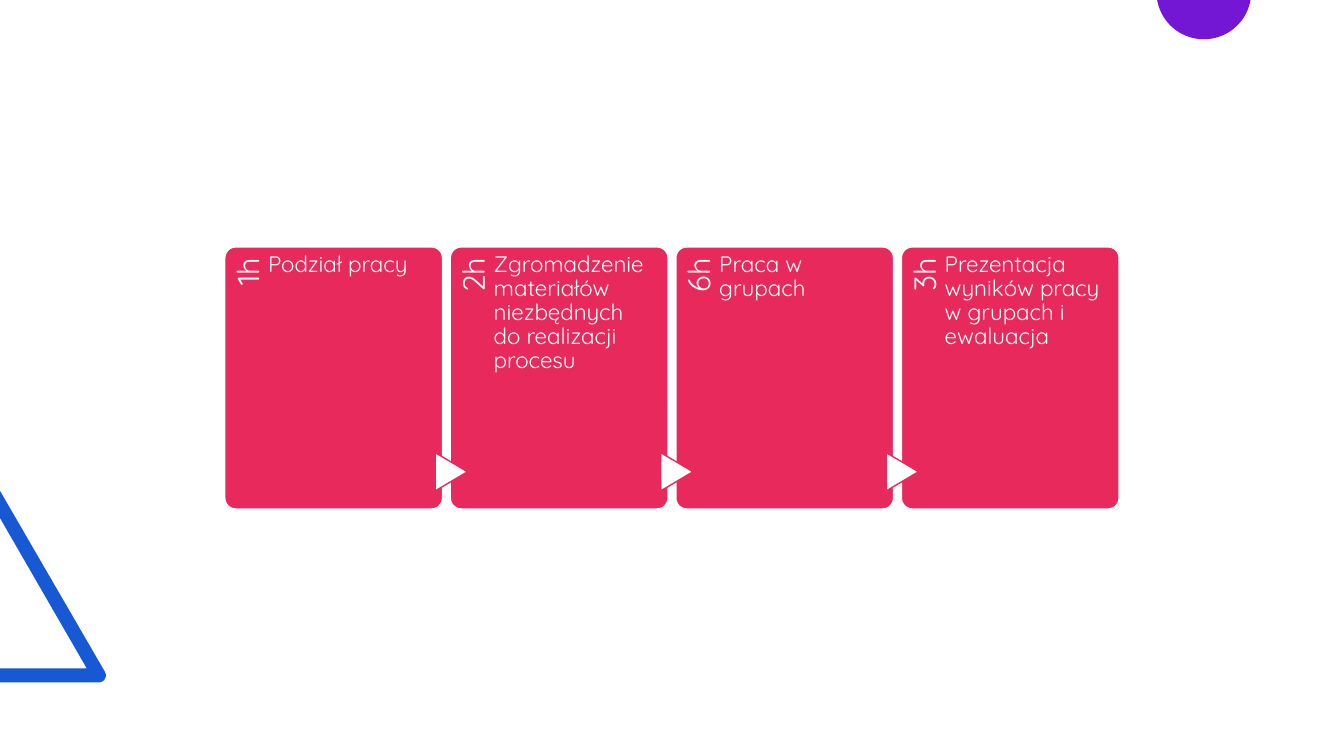
from dataclasses import dataclass
from math import cos, radians, sin

from pptx import Presentation
from pptx.dml.color import RGBColor
from pptx.enum.shapes import MSO_SHAPE
from pptx.enum.text import PP_ALIGN
from pptx.shapes.autoshape import Shape
from pptx.shapes.group import GroupShape
from pptx.slide import Slide
from pptx.util import Inches, Pt

COLORS = {"card": "E7295B", "triangle": "1759D5", "circle": "7417D5", "white": "FFFFFF"}
FONT = "Quicksand"

# Card row geometry, in inches
FIRST_LEFT, LAST_LEFT, CARD_TOP = 2.23, 8.94, 2.45
CARD_WIDTH, CARD_HEIGHT = 2.16, 2.6

Point = tuple[float, float]


@dataclass(frozen=True)
class Stage:
    hours: str
    task: str


STAGES = [
    Stage("1h", "Podział pracy"),
    Stage("2h", "Zgromadzenie materiałów niezbędnych do realizacji procesu"),
    Stage("6h", "Praca w grupach"),
    Stage("3h", "Prezentacja wyników pracy w grupach i ewaluacja"),
]


def color(name: str) -> RGBColor:
    return RGBColor.from_string(COLORS[name])


def arc(center: Point, radius: float, start: int, end: int, step: int) -> list[Point]:
    return [
        (center[0] + radius * cos(radians(angle)), center[1] + radius * sin(radians(angle)))
        for angle in range(start, end + 1, step)
    ]


def draw_outline(slide: Slide, points: list[Point], fill: str) -> None:
    corners = [(Inches(x), Inches(y)) for x, y in points]
    builder = slide.shapes.build_freeform(*corners[0])
    builder.add_line_segments(corners[1:], close=True)
    outline = builder.convert_to_shape()
    outline.shadow.inherit = False
    outline.fill.solid()
    outline.fill.fore_color.rgb = color(fill)
    outline.line.fill.background()


def draw_shape(group: GroupShape, kind: MSO_SHAPE, left: float, top: float,
               width: float, height: float, fill: str, line: str) -> Shape:
    shape = group.shapes.add_shape(
        kind, Inches(left), Inches(top), Inches(width), Inches(height))
    shape.shadow.inherit = False
    shape.fill.solid()
    shape.fill.fore_color.rgb = color(fill)
    shape.line.color.rgb = color(line)
    shape.line.width = Pt(1)
    return shape


def draw_text(group: GroupShape, text: str, left: float, top: float, width: float,
              height: float, size: int, inset_top: float, inset_right: float,
              align: PP_ALIGN) -> Shape:
    box = group.shapes.add_textbox(
        Inches(left), Inches(top), Inches(width), Inches(height))
    frame = box.text_frame
    frame.word_wrap = True
    frame.margin_left = frame.margin_bottom = 0
    frame.margin_top, frame.margin_right = Inches(inset_top), Inches(inset_right)
    frame.text = text
    paragraph = frame.paragraphs[0]
    paragraph.alignment = align
    paragraph.line_spacing = 0.9
    font = paragraph.runs[0].font
    font.name, font.size = FONT, Pt(size)
    font.color.rgb = color("white")
    return box


def draw_stage(group: GroupShape, stage: Stage, left: float, has_arrow: bool) -> None:
    card = draw_shape(group, MSO_SHAPE.ROUNDED_RECTANGLE, left, CARD_TOP,
                      CARD_WIDTH, CARD_HEIGHT, "card", "white")
    card.adjustments[0] = 0.05
    hours = draw_text(group, stage.hours, left - 0.85, 3.3, 2.13, 0.43,
                      22, 0.08, 0.11, PP_ALIGN.RIGHT)
    hours.rotation = 270
    if has_arrow:
        arrow = draw_shape(group, MSO_SHAPE.FLOWCHART_EXTRACT, left - 0.18, 4.52,
                           0.38, 0.32, "white", "card")
        arrow.rotation = 90
    draw_text(group, stage.task, left + 0.43, CARD_TOP, 1.61, CARD_HEIGHT,
              16, 0.06, 0, PP_ALIGN.LEFT)


def main() -> None:
    prs = Presentation()
    prs.slide_width, prs.slide_height = Inches(13.33), Inches(7.5)
    slide = prs.slides.add_slide(prs.slide_layouts[6])

    # Decorations at the slide edges
    triangle_tip = arc((0.98, 6.7), 0.07, -30, 90, 10)
    draw_outline(slide, [(0, 6.77), (0, 6.63), (0.86, 6.63), (0, 5.14), (0, 4.87),
                         *triangle_tip], "triangle")
    draw_outline(slide, arc((11.94, -0.08), 0.47, 10, 170, 2), "circle")

    # Work stages in order
    process = slide.shapes.add_group_shape()
    pitch = (LAST_LEFT - FIRST_LEFT) / (len(STAGES) - 1)
    for index, stage in enumerate(STAGES):
        draw_stage(process, stage, FIRST_LEFT + index * pitch, has_arrow=index > 0)

    prs.save("out.pptx")


if __name__ == "__main__":
    main()
